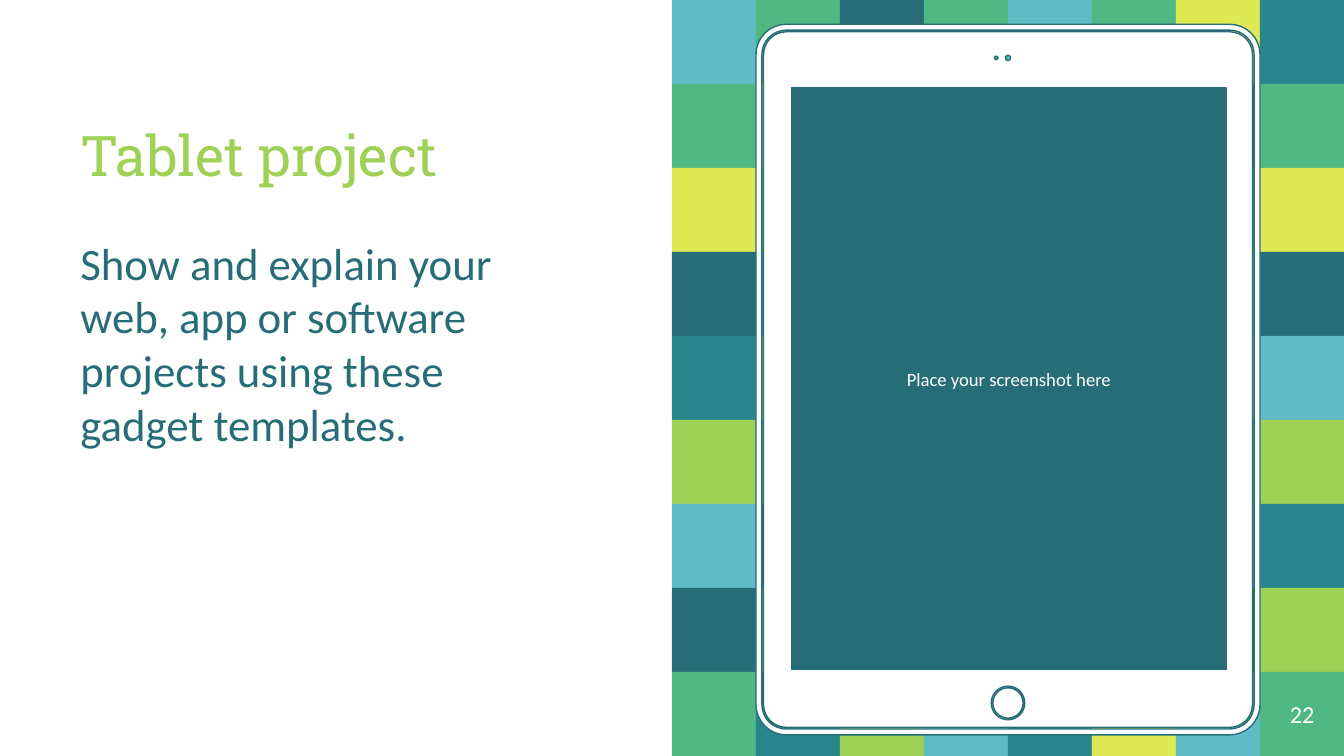
import math

import pptx
import pptx.dml.color
import pptx.enum.shapes
import pptx.enum.text
import pptx.util

RGBColor = pptx.dml.color.RGBColor
SHAPE = pptx.enum.shapes.MSO_SHAPE
ANCHOR = pptx.enum.text.MSO_ANCHOR
ALIGN = pptx.enum.text.PP_ALIGN

LIME = RGBColor(0x9E, 0xD1, 0x55)
DARK = RGBColor(0x26, 0x6D, 0x78)
YELLOW = RGBColor(0xDF, 0xE9, 0x54)
GREEN = RGBColor(0x50, 0xB8, 0x83)
TEAL = RGBColor(0x27, 0x86, 0x8B)
SKY = RGBColor(0x5F, 0xBB, 0xC5)
WHITE = RGBColor(0xFF, 0xFF, 0xFF)

# The slide is a grid of 16 columns by 9 rows; every length is in its cells.
deck = pptx.Presentation()
deck.slide_width = pptx.util.Inches(10)
CELL = deck.slide_width // 16
deck.slide_height = 9 * CELL
page = deck.slides.add_slide(deck.slide_layouts[5])


def place(*lengths):
    """Turn lengths in grid cells into slide units."""
    return [round(length * CELL) for length in lengths]


def write(box, text, size, color, font="Calibri", align=ALIGN.LEFT, anchor=ANCHOR.TOP):
    frame = box.text_frame
    frame.text = text
    frame.word_wrap = True
    frame.auto_size = pptx.enum.text.MSO_AUTO_SIZE.NONE
    frame.vertical_anchor = anchor
    frame.margin_left = frame.margin_right = pptx.util.Inches(0.1)
    frame.margin_top = frame.margin_bottom = pptx.util.Inches(0.1)
    para = frame.paragraphs[0]
    para.alignment = align
    span = para.runs[0]
    span.font.name = font
    span.font.size = pptx.util.Pt(size)
    span.font.color.rgb = color


# Mosaic on the right half; dots are cells hidden behind the tablet.
COLORS = {"L": LIME, "D": DARK, "Y": YELLOW, "G": GREEN, "T": TEAL, "S": SKY}
MOSAIC = [
    "SGDGSGYT",
    "GYTDYSTG",
    "YL....GY",
    "DG....LD",
    "TY....YS",
    "LS....GL",
    "ST....ST",
    "DLYDGDTL",
    "GTLSTYSG",
]
for row, letters in enumerate(MOSAIC):
    for column, letter in enumerate(letters, start=8):
        if letter in COLORS:
            tile = page.shapes.add_shape(SHAPE.RECTANGLE, *place(column, row, 1, 1))
            tile.shadow.inherit = False
            tile.fill.solid()
            tile.fill.fore_color.rgb = COLORS[letter]
            tile.line.fill.background()

# Tablet: nested outlines as left, top, width, height, corner radius.
# Each outline inside another switches between body and opening.
SCREEN = (9.42, 1.05, 5.18, 6.92)
outlines = [(*SCREEN, 0)]
for inset in (0, 0.07, 0.09):
    outlines.append((9 + inset, 0.29 + inset, 6 - 2 * inset, 8.46 - 2 * inset, 0.36 - inset))
for center_x, center_y, radius in [
    (12, 8.37, 0.2), (12, 8.37, 0.18), (11.86, 0.69, 0.02), (12, 0.69, 0.03),
]:
    outlines.append((center_x - radius, center_y - radius, 2 * radius, 2 * radius, radius))

builder = None
for left, top, width, height, radius in outlines:
    corners = [
        (left + width - radius, top + height - radius),
        (left + radius, top + height - radius),
        (left + radius, top + radius),
        (left + width - radius, top + radius),
    ]
    points = []
    for quarter, (x, y) in enumerate(corners):
        for step in range(9 if radius else 1):
            angle = (quarter + step / 8) * math.pi / 2
            points.append(place(x + radius * math.cos(angle), y + radius * math.sin(angle)))
    if builder is None:
        builder = page.shapes.build_freeform(*points[0])
    else:
        builder.move_to(*points[0])
    builder.add_line_segments(points[1:], close=True)
tablet = builder.convert_to_shape()
tablet.shadow.inherit = False
tablet.fill.solid()
tablet.fill.fore_color.rgb = WHITE
tablet.line.color.rgb = DARK
tablet.line.width = pptx.util.Pt(0.75)

screen = page.shapes.add_shape(SHAPE.RECTANGLE, *place(*SCREEN))
screen.shadow.inherit = False
screen.fill.solid()
screen.fill.fore_color.rgb = DARK
screen.line.fill.background()
write(screen, "Place your screenshot here", 10, WHITE, align=ALIGN.CENTER, anchor=ANCHOR.MIDDLE)

title = page.shapes.title
title.left, title.top, title.width, title.height = place(0.8, 0.9, 6.2, 1.5)
write(title, "Tablet project", 30, LIME, font="Roboto Slab", anchor=ANCHOR.BOTTOM)

body = page.shapes.add_textbox(*place(0.8, 2.64, 6.2, 5.71))
write(
    body,
    "Show and explain your web, app or software projects using these gadget templates.",
    24,
    DARK,
)
body.text_frame.paragraphs[0].space_before = pptx.util.Pt(6)

number = page.shapes.add_textbox(*place(15, 8, 1, 1))
write(number, "22", 13, WHITE, align=ALIGN.CENTER, anchor=ANCHOR.MIDDLE)

deck.save("out.pptx")
